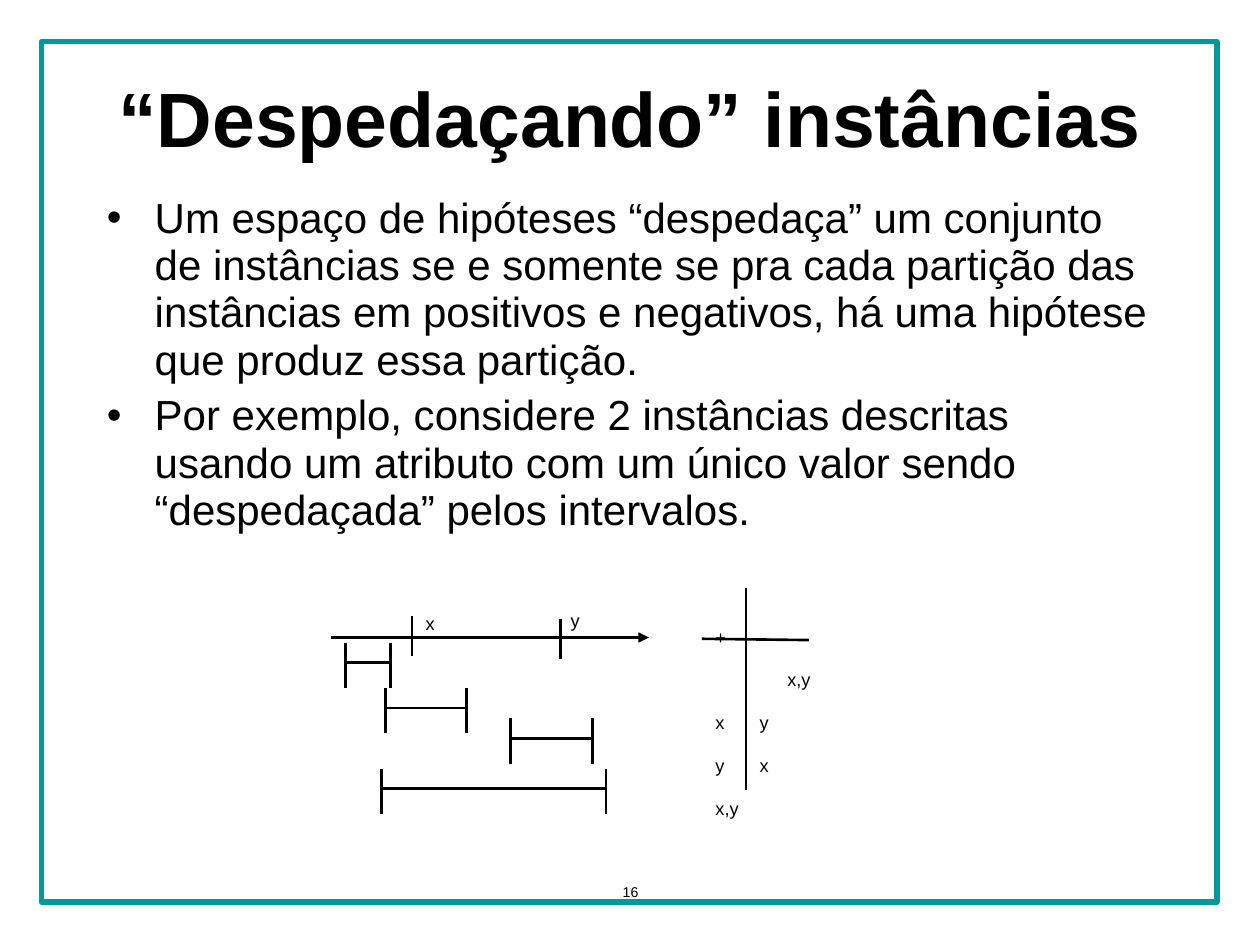
"""Build the slide on shattering instances with intervals."""
from lxml.etree import SubElement
from pptx import Presentation
from pptx.dml.color import RGBColor
from pptx.enum.shapes import MSO_CONNECTOR, MSO_SHAPE
from pptx.enum.text import MSO_ANCHOR, PP_ALIGN
from pptx.oxml.ns import qn
from pptx.util import Inches, Pt

BLACK, TEAL = "000000", "009999"
TITLE = "“Despedaçando” instâncias"
BULLETS = [
    "Um espaço de hipóteses “despedaça” um conjunto de instâncias se e somente se "
    "pra cada partição das instâncias em positivos e negativos, há uma hipótese "
    "que produz essa partição.",
    "Por exemplo, considere 2 instâncias descritas usando um atributo com um único "
    "valor sendo “despedaçada” pelos intervalos.",
]
PARTITIONS = ["+\t–", "\t\tx,y", "x\ty", "y\tx", "x,y"]
TAB_STOPS = [0.35, 0.57]
POINT_LABELS = [("x", 3.28, 4.64), ("y", 4.43, 4.62)]
AXIS = (2.63, 5.06, 5.15, 5.06)
LINES = [
    (3.27, 4.89, 3.27, 5.21),
    (4.45, 4.91, 4.45, 5.23),
    (5.57, 5.07, 6.42, 5.08),
    (5.92, 4.67, 5.92, 6.27),
]
INTERVALS = [(3.03, 4.81, 6.1), (2.74, 3.1, 5.1), (3.06, 3.7, 5.46), (4.05, 4.7, 5.7)]
END_HEIGHT, BAR_OFFSET = 0.36, 0.16


def color(value):
    return RGBColor.from_string(value)


def add_text(s, paragraphs, box, size, bold=False, align=PP_ALIGN.LEFT,
             wrap=True, lowered=False):
    tf = s.shapes.add_textbox(*map(Inches, box)).text_frame
    tf.word_wrap = wrap
    tf.text = "\n".join(paragraphs)
    for p in tf.paragraphs:
        p.alignment = align
        for r in p.runs:
            r.font.name, r.font.size, r.font.bold = "Arial", Pt(size), bold
            r.font.color.rgb = color(BLACK)
            if lowered:
                r.font._element.set("baseline", "-25000")
    return tf


def add_bullet(p):
    p.line_spacing, p.space_before = 0.94, Pt(4.8)
    pPr = p._p.get_or_add_pPr()
    pPr.set("marL", str(Inches(0.38)))
    pPr.set("indent", str(-Inches(0.38)))
    SubElement(pPr, qn("a:buFont")).set("typeface", "Arial")
    SubElement(pPr, qn("a:buChar")).set("char", "•")


def add_tabs(p):
    tabs = SubElement(p._p.get_or_add_pPr(), qn("a:tabLst"))
    for stop in TAB_STOPS:
        tab = SubElement(tabs, qn("a:tab"))
        tab.set("pos", str(Inches(stop)))
        tab.set("algn", "l")


def add_line(s, ends, arrow=False):
    sp = s.shapes.add_connector(MSO_CONNECTOR.STRAIGHT, *map(Inches, ends))
    sp.line.color.rgb, sp.line.width = color(BLACK), Pt(1.5)
    if arrow:
        SubElement(sp.line._get_or_add_ln(), qn("a:tailEnd")).set("type", "triangle")
    SubElement(sp._element.spPr, qn("a:effectLst"))


def main():
    prs = Presentation()
    prs.slide_width, prs.slide_height = Inches(10), Inches(7.5)
    s = prs.slides.add_slide(prs.slide_layouts[6])

    frame = s.shapes.add_shape(MSO_SHAPE.RECTANGLE, *map(Inches, (0.33, 0.33, 9.33, 6.83)))
    frame.shadow.inherit = False
    frame.fill.background()
    frame.line.color.rgb, frame.line.width = color(TEAL), Pt(3)

    add_text(s, ["16"], (3.42, 6.83, 3.17, 0.52), 14, align=PP_ALIGN.CENTER, lowered=True)
    for p in add_text(s, PARTITIONS, (5.58, 4.75, 1.15, 1.77), 18, lowered=True).paragraphs:
        add_tabs(p)
    title = add_text(s, [TITLE], (0.5, 0.3, 9, 1.25), 44, bold=True, align=PP_ALIGN.CENTER)
    title.vertical_anchor = MSO_ANCHOR.MIDDLE
    for p in add_text(s, BULLETS, (0.75, 1.5, 8.5, 1.98), 24).paragraphs:
        add_bullet(p)

    add_line(s, AXIS, arrow=True)
    for ends in LINES:
        add_line(s, ends)
    for label, left, top in POINT_LABELS:
        add_text(s, [label], (left, top, 0.34, 0.43), 18, wrap=False, lowered=True)
    for left, right, top in INTERVALS:
        bar = top + BAR_OFFSET
        add_line(s, (left, bar, right, bar))
        for x in (left, right):
            add_line(s, (x, top, x, top + END_HEIGHT))

    prs.save("out.pptx")


if __name__ == "__main__":
    main()
